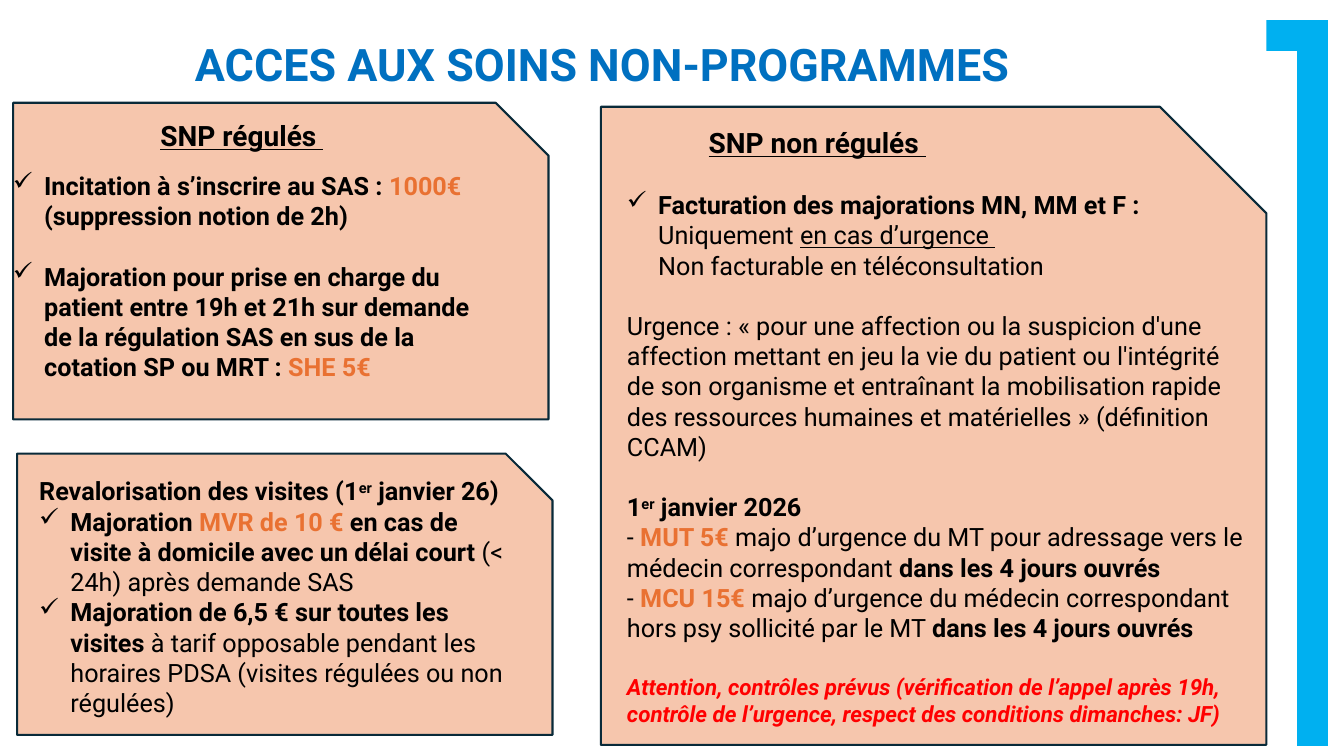
from dataclasses import dataclass

from lxml import etree
from pptx import Presentation
from pptx.dml.color import RGBColor
from pptx.enum.shapes import MSO_SHAPE
from pptx.enum.text import MSO_AUTO_SIZE, PP_ALIGN
from pptx.oxml.ns import qn
from pptx.util import Inches, Pt

SNIP = MSO_SHAPE.SNIP_1_RECTANGLE
CORNER = MSO_SHAPE.CORNER
GROW = MSO_AUTO_SIZE.SHAPE_TO_FIT_TEXT
LEFT = PP_ALIGN.LEFT
CENTER = PP_ALIGN.CENTER

FONT = "Roboto"
BLACK = "000000"
BLUE = "0070C0"
SKY = "00B0F0"
ORANGE = "E97132"
RED = "FF0000"
PEACH = "F6C6AD"
NAVY = "092A39"
GAP = 21.5

Area = tuple[float, float, float, float]


@dataclass
class Bit:
    text: str
    bold: bool = False
    color: str = BLACK
    under: bool = False
    italic: bool = False
    raised: bool = False
    size: int = 18


@dataclass
class Para:
    bits: list[Bit]
    tick: bool = False
    after: float = 0
    align: PP_ALIGN = LEFT


@dataclass
class Note:
    area: Area
    paras: list[Para]


def rgb(code: str) -> RGBColor:
    return RGBColor.from_string(code)


def bold(text: str, color: str = BLACK) -> Bit:
    return Bit(text, bold=True, color=color)


def head(text: str, size: int = 20, color: str = BLACK,
         under: bool = True, align: PP_ALIGN = CENTER) -> Para:
    bit = Bit(text, bold=True, color=color, under=under, size=size)
    return Para([bit], align=align)


ORDER = Bit("er", bold=True, raised=True)

CARDS: list[Area] = [
    (0.13, 1.02, 5.31, 3.14),
    (0.17, 4.5, 5.31, 2.79),
    (5.96, 1.06, 6.6, 6.33),
]

NOTES = [
    Note((0.39, 0.32, 11.28, 0.64), [
        head("ACCES AUX SOINS NON-PROGRAMMES ", 32, BLUE, False),
    ]),
    Note((0.03, 1.64, 5.06, 2.49), [
        Para([
            bold("Incitation à s’inscrire au SAS : "),
            bold("1000€", ORANGE),
            bold(" (suppression notion de 2h)"),
        ], tick=True, after=GAP),
        Para([
            bold("Majoration pour prise en charge du patient entre 19h et 21h "
                 "sur demande de la régulation SAS en sus de la cotation SP "
                 "ou MRT : "),
            bold("SHE 5€", ORANGE),
        ], tick=True),
    ]),
    Note((0.68, 1.13, 3.44, 0.44), [head("SNP régulés ")]),
    Note((0.29, 4.67, 4.99, 2.52), [
        Para([bold("Revalorisation des visites (1"), ORDER,
              bold(" janvier 26)")]),
        Para([
            bold("Majoration "),
            bold("MVR de 10 € ", ORANGE),
            bold("en cas de visite à domicile avec un délai court "),
            Bit("(< 24h) après demande SAS"),
        ], tick=True),
        Para([
            bold("Majoration de 6,5 € sur toutes les visites "),
            Bit("à tarif opposable pendant les horaires PDSA "
                "(visites régulées ou non régulées)"),
        ], tick=True),
    ]),
    Note((6.93, 1.2, 3.44, 0.44), [head("SNP non régulés ", align=LEFT)]),
    Note((6.12, 1.83, 6.39, 5.49), [
        Para([
            bold("Facturation des majorations MN, MM et F :\n"),
            Bit("Uniquement "),
            Bit("en cas d’urgence \n", under=True),
            Bit("Non facturable en téléconsultation"),
        ], tick=True, after=GAP),
        Para([
            Bit("Urgence : « pour une affection ou la suspicion d'une "
                "affection mettant en jeu la vie du patient ou l'intégrité "
                "de son organisme et entraînant la mobilisation rapide des "
                "ressources humaines et matérielles » (définition CCAM)"),
        ], after=GAP),
        Para([
            bold("1"), ORDER, bold(" janvier 2026\n"),
            Bit("- "),
            bold("MUT 5€", ORANGE),
            Bit(" majo d’urgence du MT pour adressage vers le médecin "
                "correspondant "),
            bold("dans les 4 jours ouvrés\n"),
            Bit("- "),
            bold("MCU 15€ ", ORANGE),
            Bit("majo d’urgence du médecin correspondant hors psy sollicité "
                "par le MT "),
            bold("dans les 4 jours ouvrés"),
        ], after=GAP),
        Para([
            Bit("Attention, contrôles prévus (vérification de l’appel après "
                "19h, contrôle de l’urgence, respect des conditions "
                "dimanches: JF)", bold=True, color=RED, italic=True, size=16),
        ]),
    ]),
]


def add_form(slide, kind: MSO_SHAPE, area: Area, fill: str):
    form = slide.shapes.add_shape(kind, *map(Inches, area))
    form.shadow.inherit = False
    form.fill.solid()
    form.fill.fore_color.rgb = rgb(fill)
    form.line.fill.background()
    return form


def add_card(slide, area: Area) -> None:
    card = add_form(slide, SNIP, area, PEACH)
    card.line.color.rgb = rgb(NAVY)
    card.line.width = Pt(1.5)


def add_bit(line, bit: Bit) -> None:
    text, mark, _ = bit.text.partition("\n")
    run = line.add_run()
    run.text = text
    font = run.font
    font.name = FONT
    font.size = Pt(bit.size)
    font.bold = bit.bold
    font.italic = bit.italic
    font.underline = bit.under
    font.color.rgb = rgb(bit.color)
    if bit.raised:
        run._r.get_or_add_rPr().set("baseline", "30000")
    if mark:
        line.add_line_break()


def add_tick(line) -> None:
    props = line._p.get_or_add_pPr()
    props.set("marL", str(Inches(0.31)))
    props.set("indent", str(Inches(-0.31)))
    etree.SubElement(props, qn("a:buChar")).set("char", "✓")


def add_note(slide, note: Note) -> None:
    frame = slide.shapes.add_textbox(*map(Inches, note.area)).text_frame
    frame.word_wrap = True
    frame.auto_size = GROW
    for i, para in enumerate(note.paras):
        line = frame.add_paragraph() if i else frame.paragraphs[0]
        line.alignment = para.align
        line.space_after = Pt(para.after)
        if para.tick:
            add_tick(line)
        for bit in para.bits:
            add_bit(line, bit)


def main() -> None:
    deck = Presentation()
    deck.slide_width = Inches(13.33)
    deck.slide_height = Inches(7.5)
    slide = deck.slides.add_slide(deck.slide_layouts[6])
    add_form(slide, CORNER, (12.56, 0.2, 0.61, 7.2), SKY).rotation = 180
    for area in CARDS:
        add_card(slide, area)
    for note in NOTES:
        add_note(slide, note)
    deck.save("out.pptx")


if __name__ == "__main__":
    main()
